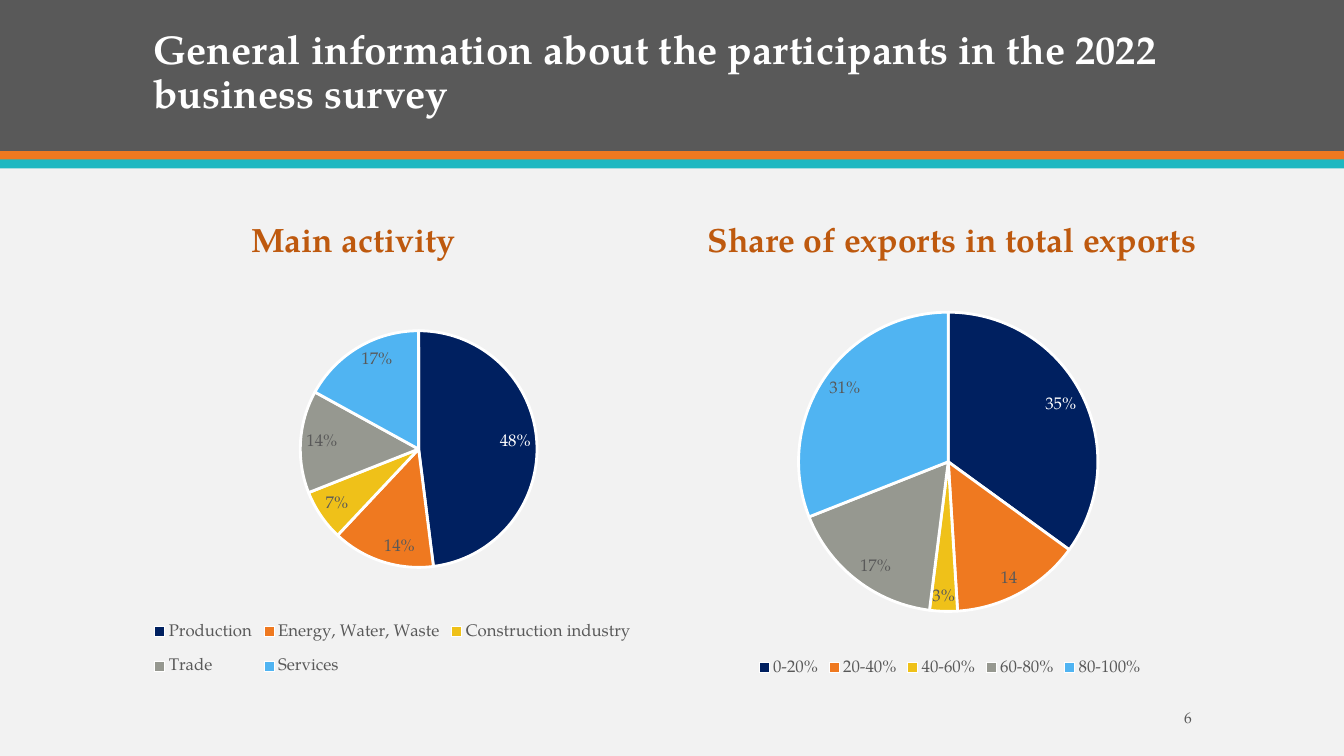
from pptx import Presentation
from pptx.chart.data import CategoryChartData
from pptx.dml.color import RGBColor
from pptx.enum.chart import XL_CHART_TYPE, XL_LABEL_POSITION as LabelPos, XL_LEGEND_POSITION as LegendPos
from pptx.enum.shapes import MSO_SHAPE
from pptx.enum.text import MSO_ANCHOR, PP_ALIGN as Align
from pptx.oxml import parse_xml
from pptx.oxml.ns import nsdecls
from pptx.util import Inches, Pt

# Content
TITLE = "General information about the participants in the 2022 business survey"
PAGE_NUMBER = "6"
SURVEY = [
    {"heading": "Main activity", "heading_box": (0.6, 1.9, 5.81, 0.95), "align": Align.CENTER,
     "chart_box": (1.42, 2.96, 5, 4.07),
     "plot": (0.093, 0.079, 0.907, 0.577), "legend": (0.01, 0.75, 0.97, 0.21),
     "shares": [("Production", 48, "48%"), ("Energy, Water, Waste", 14, "14%"),
                ("Construction industry", 7, "7%"), ("Trade", 14, "14%"), ("Services", 17, "17%")]},
    {"heading": "Share of exports in total exports", "heading_box": (6.92, 1.9, 6.41, 0.95),
     "align": Align.LEFT, "chart_box": (6.92, 2.96, 5, 3.79),
     "plot": (0.2, 0.036, 0.594, 0.784), "legend": None,
     "shares": [("0-20%", 35, "35%"), ("20-40%", 14, "14"), ("40-60%", 3, "3%"),
                ("60-80%", 17, "17%"), ("80-100%", 31, "31%")]},
]

# Style
FONT = "TeX Gyre Pagella"
COLORS = {"paper": "F2F2F2", "banner": "595959", "orange": "EF7920", "teal": "1EB8C1",
          "heading": "BE590E", "text": "595959", "white": "FFFFFF"}
SLICES = ["002060", "EF7920", "EFC119", "969890", "50B4F2"]
WIDTH, HEIGHT = 13.33, 7.5
BANDS = [("banner", 0, 1.5), ("orange", 1.5, 0.09), ("teal", 1.58, 0.09)]


def rgb(value):
    return RGBColor.from_string(value)


def style_font(font, size, color, bold=False):
    for name, value in {"name": FONT, "size": Pt(size), "bold": bold}.items():
        setattr(font, name, value)
    font.color.rgb = rgb(color)


def add_text(slide, text, box, size, color, align=Align.LEFT, bold=False, spacing=1.0):
    frame = slide.shapes.add_textbox(*map(Inches, box)).text_frame
    frame.word_wrap = True
    frame.vertical_anchor = MSO_ANCHOR.MIDDLE
    paragraph = frame.paragraphs[0]
    paragraph.alignment, paragraph.line_spacing = align, spacing
    run = paragraph.add_run()
    run.text = text
    style_font(run.font, size, COLORS[color], bold)


def set_layout(element, shares, inner=False):
    """Place a chart part by shares of the chart's size."""
    target = '<c:layoutTarget val="inner"/>' if inner else ""
    modes = '<c:xMode val="edge"/><c:yMode val="edge"/>'
    sizes = "".join(f'<c:{key} val="{share}"/>' for key, share in zip("xywh", shares))
    layout = parse_xml(f'<c:layout {nsdecls("c")}><c:manualLayout>{target}{modes}{sizes}'
                       '</c:manualLayout></c:layout>')
    for old in element.findall(layout.tag):
        element.remove(old)
    element.insert(0 if inner else 1, layout)


def add_pie(slide, topic):
    names, values, labels = zip(*topic["shares"])
    data = CategoryChartData()
    data.categories = names
    data.add_series("Series 1", values)
    chart = slide.shapes.add_chart(XL_CHART_TYPE.PIE, *map(Inches, topic["chart_box"]), data).chart
    chart.has_title = False
    style_font(chart.font, 10, COLORS["text"])

    chart.has_legend = True
    legend = chart.legend
    legend.position, legend.include_in_layout = LegendPos.BOTTOM, False
    style_font(legend.font, 12, COLORS["text"])
    if topic["legend"]:
        set_layout(legend._element, topic["legend"])

    plot = chart.plots[0]
    set_layout(plot._element.getparent(), topic["plot"], inner=True)
    plot.vary_by_categories = True
    series = plot.series[0]
    series.data_labels.show_value = True
    series.data_labels.position = LabelPos.INSIDE_END
    style_font(series.data_labels.font, 12, COLORS["text"])

    # Slices and their labels
    for index, (color, label) in enumerate(zip(SLICES, labels)):
        point = series.points[index]
        point.format.fill.solid()
        point.format.fill.fore_color.rgb = rgb(color)
        point.format.line.color.rgb = rgb(COLORS["white"])
        point.format.line.width = Pt(2)
        run = point.data_label.text_frame.paragraphs[0].add_run()
        run.text = label
        style_font(run.font, 12, COLORS["text" if index else "white"])
        point.data_label.position = LabelPos.INSIDE_END


def main():
    deck = Presentation()
    deck.slide_width, deck.slide_height = Inches(WIDTH), Inches(HEIGHT)
    slide = deck.slides.add_slide(deck.slide_layouts[6])
    slide.background.fill.solid()
    slide.background.fill.fore_color.rgb = rgb(COLORS["paper"])

    # Banner and stripes
    for color, top, height in BANDS:
        band = slide.shapes.add_shape(MSO_SHAPE.RECTANGLE, 0, *map(Inches, (top, WIDTH, height)))
        band.shadow.inherit = False
        band.fill.solid()
        band.fill.fore_color.rgb = rgb(COLORS[color])
        band.line.fill.background()

    add_text(slide, TITLE, (1.42, 0.2, 10.82, 1.06), 28.8, "white", bold=True, spacing=0.9)

    # Headings and pies
    for topic in SURVEY:
        add_text(slide, topic["heading"], topic["heading_box"], 24, "heading", topic["align"], bold=True)
        add_pie(slide, topic)

    add_text(slide, PAGE_NUMBER, (10.42, 6.97, 1.5, 0.3), 11, "text", Align.RIGHT)
    deck.save("out.pptx")


if __name__ == "__main__":
    main()
